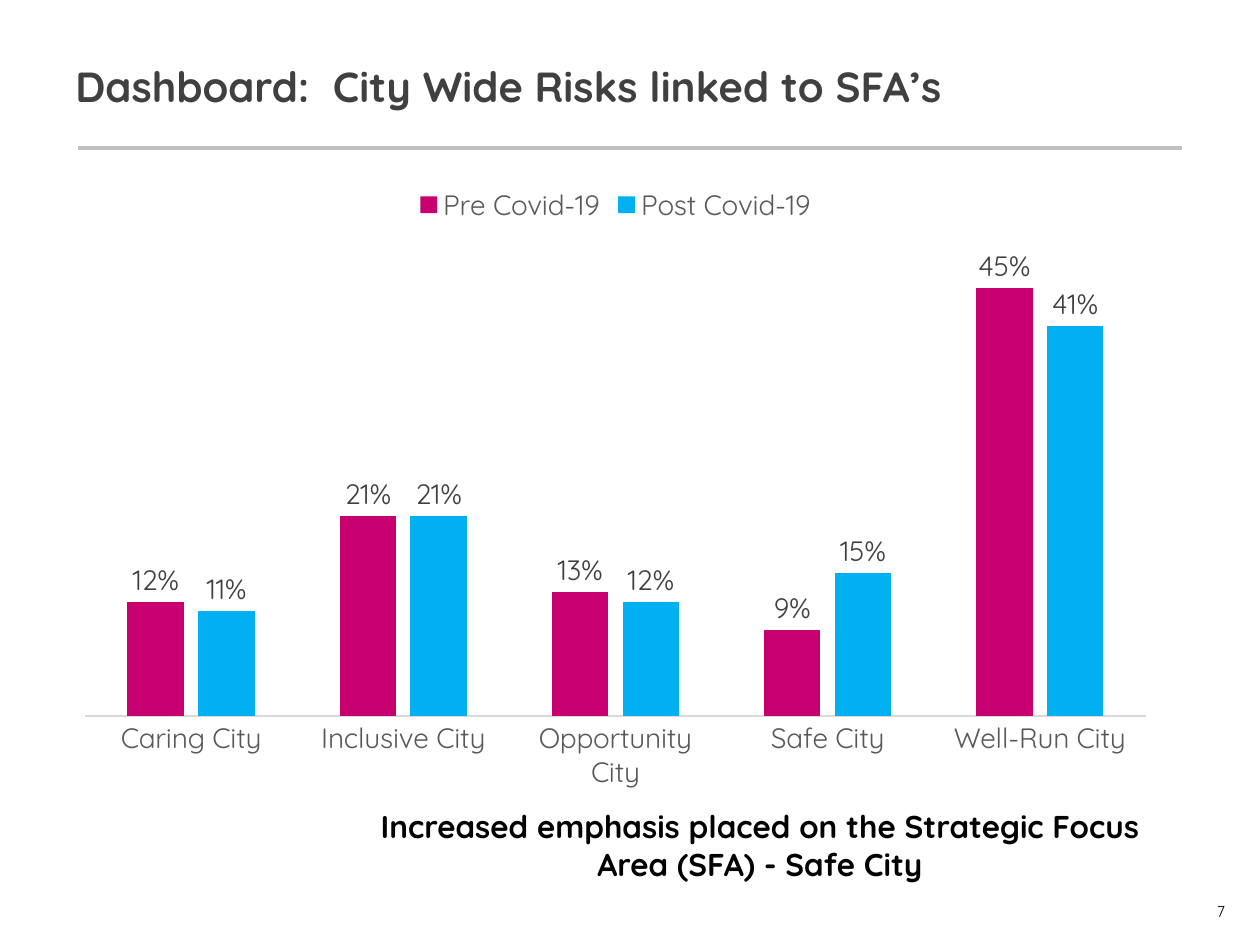
from pptx import Presentation
from pptx.chart.data import CategoryChartData
from pptx.dml.color import RGBColor
from pptx.enum.chart import (XL_CHART_TYPE, XL_LABEL_POSITION as LABEL_POS,
                             XL_LEGEND_POSITION as LEGEND_POS, XL_TICK_MARK as TICK)
from pptx.enum.shapes import MSO_CONNECTOR
from pptx.enum.text import MSO_ANCHOR as ANCHOR, PP_ALIGN as ALIGN
from pptx.oxml.ns import qn
from pptx.util import Emu, Pt
from lxml.etree import SubElement

FONT = "Quicksand"
BLACK = RGBColor(0x00, 0x00, 0x00)
DARK = RGBColor(0x40, 0x40, 0x40)
GREY = RGBColor(0x59, 0x59, 0x59)
RULE = RGBColor(0xBF, 0xBF, 0xBF)
AXIS = RGBColor(0xD9, 0xD9, 0xD9)
MAGENTA = RGBColor(0xC8, 0x00, 0x6F)
BLUE = RGBColor(0x00, 0xB0, 0xF0)

CATEGORIES = ["Caring City", "Inclusive City", "Opportunity City", "Safe City", "Well-Run City"]
SERIES = [
    ("Pre Covid-19", MAGENTA, (0.12, 0.21, 0.13, 0.09, 0.45)),
    ("Post Covid-19", BLUE, (0.11, 0.21, 0.12, 0.15, 0.41)),
]


def px(n):
    """Turn pixels at 126 to the inch into EMU."""
    return Emu(round(n * 914400 / 126))


def set_font(font, size, color, bold=False):
    """Give a font the deck's typeface with a size, colour and weight."""
    font.name, font.size, font.bold = FONT, Pt(size), bold
    font.color.rgb = color


def add_text(s, box, text, size, color, bold=False, align=ALIGN.LEFT, anchor=ANCHOR.TOP):
    """Add a wrapped one-paragraph text box and return its text frame."""
    tf = s.shapes.add_textbox(*map(px, box)).text_frame
    tf.word_wrap = True
    tf.vertical_anchor = anchor
    p = tf.paragraphs[0]
    p.text, p.alignment = text, align
    set_font(p.font, size, color, bold)
    return tf


def add_header(s, box):
    """Add the title and the rule beneath it."""
    x, y, w, h = box
    add_text(s, (x, y, w, 96), "Dashboard:  City Wide Risks linked to SFA’s",
             24, DARK, True, anchor=ANCHOR.MIDDLE)
    line = s.shapes.add_connector(MSO_CONNECTOR.STRAIGHT,
                                  px(x + 15), px(y + h), px(x + w - 15), px(y + h))
    line.line.color.rgb = RULE
    line.line.width = Pt(2)
    SubElement(line._element.spPr, qn("a:effectLst"))


def add_risk_chart(s, box):
    """Add the clustered columns of risk share before and after Covid-19."""
    data = CategoryChartData(number_format="0%")
    data.categories = CATEGORIES
    for name, _, values in SERIES:
        data.add_series(name, values)
    chart = s.shapes.add_chart(XL_CHART_TYPE.COLUMN_CLUSTERED, *map(px, box), data).chart
    set_font(chart.font, 16, BLACK)
    chart.has_title = False
    chart.has_legend = True
    chart.legend.position = LEGEND_POS.TOP
    chart.legend.include_in_layout = False
    set_font(chart.legend.font, 16, GREY)

    cat = chart.category_axis
    cat.major_tick_mark = cat.minor_tick_mark = TICK.NONE
    cat.format.line.color.rgb = AXIS
    cat.format.line.width = Pt(0.75)
    set_font(cat.tick_labels.font, 16, GREY)
    val = chart.value_axis
    val.minimum_scale, val.maximum_scale = 0, 0.5
    val.has_major_gridlines = False
    val.visible = False

    plot = chart.plots[0]
    plot.gap_width, plot.overlap = 150, -25
    plot.vary_by_categories = False
    for series, (_, color, _) in zip(plot.series, SERIES):
        series.format.fill.solid()
        series.format.fill.fore_color.rgb = color
        series.invert_if_negative = False
        labels = series.data_labels
        labels.show_value = True
        labels.number_format, labels.number_format_is_linked = "0%", False
        labels.position = LABEL_POS.OUTSIDE_END
        set_font(labels.font, 16, DARK)


def add_takeaway(s, box):
    """Add the bold conclusion under the chart."""
    add_text(s, box, "Increased emphasis placed on the Strategic Focus Area (SFA) - Safe City",
             18, BLACK, True, ALIGN.CENTER)


def add_page_number(s, box):
    """Add the page number in the bottom corner."""
    tf = add_text(s, box, "7", 9, BLACK, align=ALIGN.RIGHT, anchor=ANCHOR.MIDDLE)
    tf.margin_left = tf.margin_top = px(10)
    tf.margin_right = tf.margin_bottom = 0


def main():
    """Build the slide and save it."""
    prs = Presentation()
    prs.slide_width, prs.slide_height = px(1260), px(945)
    s = prs.slides.add_slide(prs.slide_layouts[6])
    add_header(s, (63, 38, 1134, 110))
    add_page_number(s, (1154, 891, 71, 31))
    add_takeaway(s, (352, 801, 816, 89))
    add_risk_chart(s, (63, 173, 1105, 629))
    prs.save("out.pptx")


if __name__ == "__main__":
    main()
